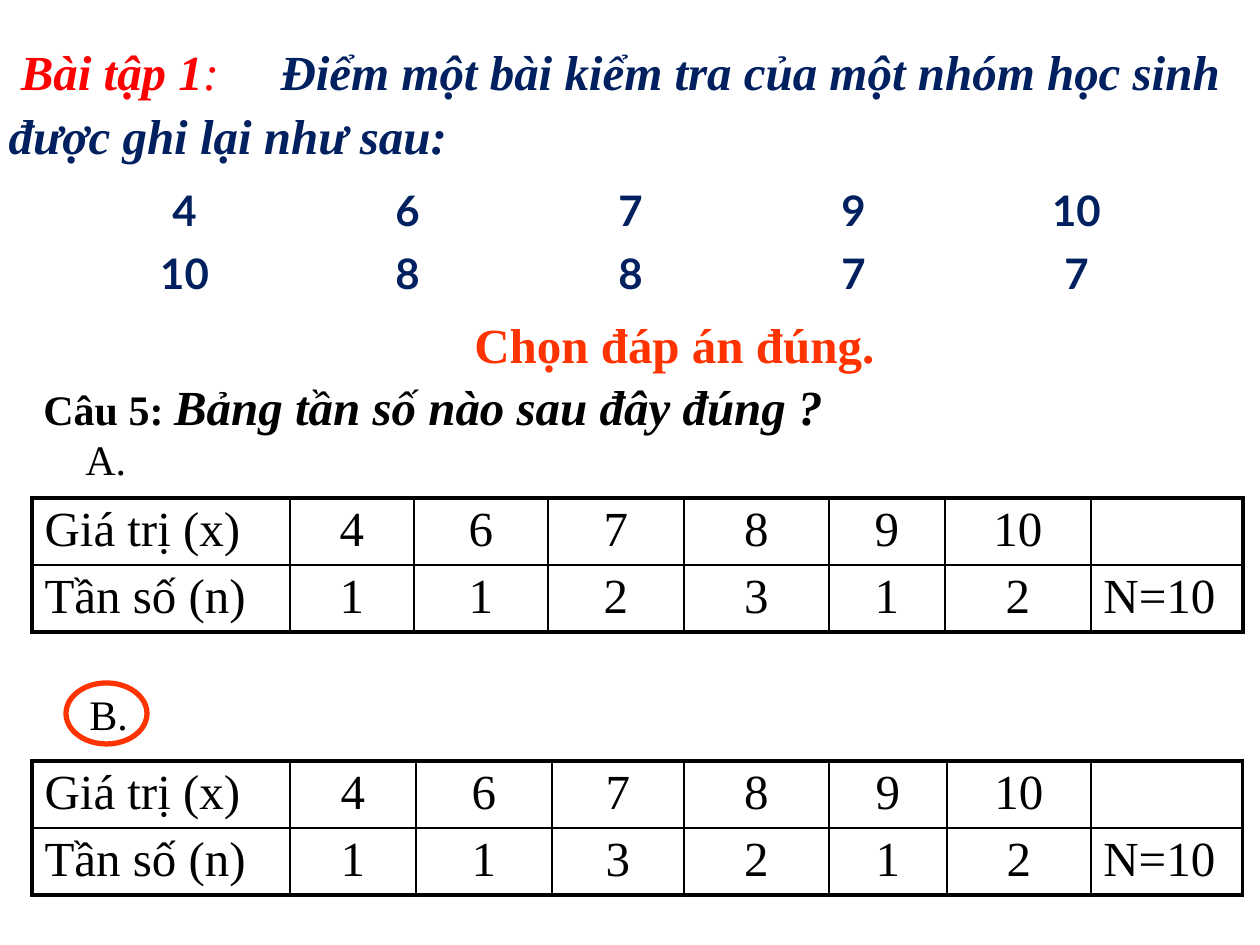
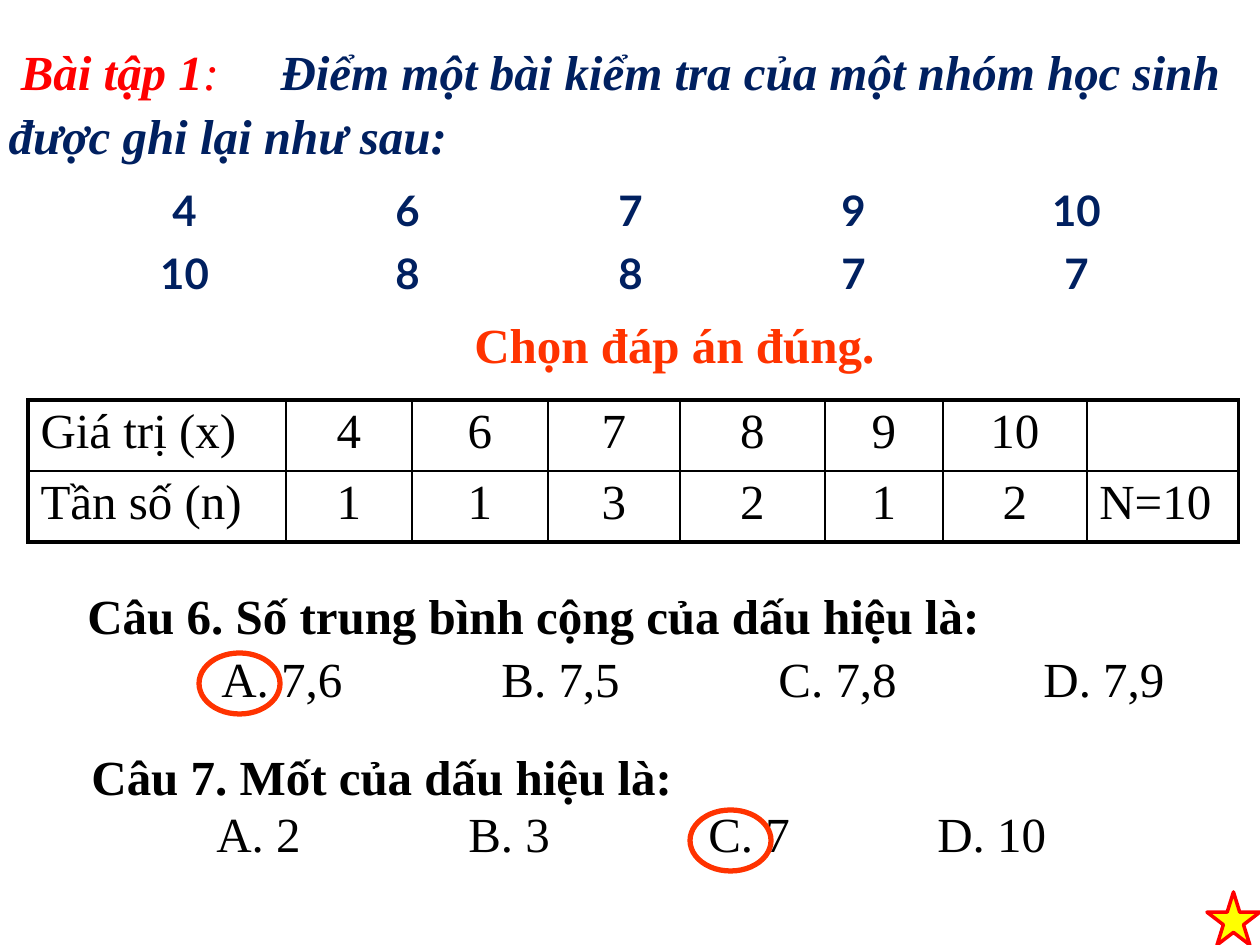
import dataclasses

import lxml.etree
import pptx
import pptx.dml.color
import pptx.enum.shapes
import pptx.enum.text
import pptx.oxml.ns
import pptx.util

EMU_PER_PX = 914400 / 126
INSET = 13
SHAPES = pptx.enum.shapes.MSO_SHAPE
ALIGN = pptx.enum.text.PP_ALIGN
NO_TABLE_STYLE = "{2D5ABB26-0587-4C30-8999-92F81FD0307C}"


@dataclasses.dataclass(frozen=True)
class Theme:
    """Colours, fonts, type sizes and line widths of the lesson."""

    ink: str = "000000"
    navy: str = "002060"
    red: str = "FF0000"
    orange: str = "FF3300"
    yellow: str = "FFFF00"
    serif: str = "Times New Roman"
    digits: str = "Lato"
    large: int = 28
    small: int = 24
    thin: float = 1
    thick: float = 2.25
    ring: float = 3
    star: float = 2


THEME = Theme()
TIGHT = {"line_spacing": 0.9, "space_before": pptx.util.Pt(6.5)}
SCORES = [["4", "6", "7", "9", "10"], ["10", "8", "8", "7", "7"]]
VALUES = ["Giá trị (x)", "4", "6", "7", "8", "9", "10", ""]
COUNTS_A = ["Tần số (n)", "1", "1", "2", "3", "1", "2", "N=10"]
COUNTS_B = ["Tần số (n)", "1", "1", "3", "2", "1", "2", "N=10"]
WIDTHS_A = [258, 124, 134, 136, 145, 116, 146, 152]
WIDTHS_B = [258, 126, 136, 132, 145, 118, 144, 152]


def px(length):
    """Turn px into EMU."""
    return pptx.util.Emu(round(length * EMU_PER_PX))


def box(*lengths):
    """Turn left, top, width and height from px into EMU."""
    return [px(length) for length in lengths]


def rgb(colour):
    """Return the colour object of a hex string."""
    return pptx.dml.color.RGBColor.from_string(colour)


def assign(target, values):
    """Set each attribute named in a dict."""
    for key, value in values.items():
        setattr(target, key, value)


def add_run(paragraph, text, colour=THEME.ink, size=THEME.large,
            name=THEME.serif, bold=False, italic=False):
    """Append one formatted run."""
    run = paragraph.add_run()
    run.text = text
    assign(run.font, {"name": name, "size": pptx.util.Pt(size),
                      "bold": bold, "italic": italic})
    run.font.color.rgb = rgb(colour)


def add_tab_stop(paragraph, position):
    """Place a left tab stop, given in px."""
    qn = pptx.oxml.ns.qn
    tabs = lxml.etree.SubElement(paragraph._p.get_or_add_pPr(), qn("a:tabLst"))
    lxml.etree.SubElement(tabs, qn("a:tab"), pos=str(px(position)), algn="l")


def fill_text(frame, lines, spacing):
    """Write lines, each a list of runs, into a text frame."""
    assign(frame, {"word_wrap": True,
                   "auto_size": pptx.enum.text.MSO_AUTO_SIZE.NONE,
                   "vertical_anchor": pptx.enum.text.MSO_ANCHOR.TOP})
    for number, runs in enumerate(lines):
        paragraph = frame.add_paragraph() if number else frame.paragraphs[0]
        assign(paragraph, {"alignment": ALIGN.LEFT, **spacing})
        for text, style in runs:
            add_run(paragraph, text, **style)


def add_text(slide, place, runs, spacing=None):
    """Add a text box holding one line."""
    frame = slide.shapes.add_textbox(*box(*place)).text_frame
    fill_text(frame, [runs], spacing or {})


def add_question(slide, left, top, question, pitch, options, spacing=None):
    """Add a bold question above a row of options keyed by their text edge."""
    add_text(slide, (left - INSET, top, 1100, 63),
             [(question, {"bold": True})], spacing)
    for edge, option in options.items():
        add_text(slide, (edge - INSET, top + pitch, 180, 63),
                 [(option, {})], spacing)


def add_outlined(slide, kind, place, line, width, fill=None):
    """Add a preset shape with an outline and an optional fill."""
    shape = slide.shapes.add_shape(kind, *box(*place))
    shape.shadow.inherit = False
    shape.line.color.rgb = rgb(line)
    shape.line.width = pptx.util.Pt(width)
    if fill:
        shape.fill.solid()
        shape.fill.fore_color.rgb = rgb(fill)
    else:
        shape.fill.background()


def add_ring(slide, left, top):
    """Circle the right answer."""
    add_outlined(slide, SHAPES.OVAL, (left, top, 81, 61), THEME.orange, THEME.ring)


def set_border(cell, side, width):
    """Draw one side of a cell."""
    qn = pptx.oxml.ns.qn
    line = lxml.etree.Element(qn("a:ln" + side), w=str(pptx.util.Pt(width)))
    fill = lxml.etree.SubElement(line, qn("a:solidFill"))
    lxml.etree.SubElement(fill, qn("a:srgbClr"), val=THEME.ink)
    cell._tc.get_or_add_tcPr().insert("LRTB".index(side), line)


def add_grid(slide, left, top, widths, row_height, rows, style):
    """Add a plain table and return it."""
    table = slide.shapes.add_table(
        len(rows), len(widths),
        *box(left, top, sum(widths), row_height * len(rows))).table
    table._tbl.tblPr.find(pptx.oxml.ns.qn("a:tableStyleId")).text = NO_TABLE_STYLE
    assign(table, {"first_row": False, "horz_banding": False})
    for column, width in zip(table.columns, widths):
        column.width = px(width)
    for row, texts in zip(table.rows, rows):
        row.height = px(row_height)
        for cell, text in zip(row.cells, texts):
            assign(cell, {"margin_top": px(5), "margin_bottom": px(5)})
            cell.fill.background()
            paragraph = cell.text_frame.paragraphs[0]
            paragraph.alignment = ALIGN.CENTER
            if text:
                add_run(paragraph, text, **style)
    return table


def add_frequencies(slide, left, top, widths, row_height, counts):
    """Add a ruled frequency table with a thick outer frame."""
    table = add_grid(slide, left, top, widths, row_height, [VALUES, counts], {})
    last = len(widths) - 1
    for r, row in enumerate(table.rows):
        for c, cell in enumerate(row.cells):
            outer = {"L": c == 0, "R": c == last, "T": r == 0, "B": r == 1}
            for side, is_outer in outer.items():
                set_border(cell, side, THEME.thick if is_outer else THEME.thin)
            if c in (0, last):
                cell.text_frame.paragraphs[0].alignment = ALIGN.LEFT


def add_exercise_slide(deck):
    """Add a slide with the heading, the scores and the instruction."""
    slide = deck.slides.add_slide(deck.slide_layouts[5])
    heading = slide.shapes.title
    assign(heading, dict(zip(("left", "top", "width", "height"),
                             box(-4, 42, 1264, 116))))
    slanted = {"italic": True, "colour": THEME.red}
    navy = {"italic": True, "bold": True, "colour": THEME.navy}
    fill_text(heading.text_frame, [
        [(" Bài tập 1", {**slanted, "bold": True}), (":\t", slanted),
         ("Điểm một bài kiểm tra của một nhóm học sinh", navy)],
        [("được ghi lại như sau:", navy)],
    ], TIGHT)
    add_tab_stop(heading.text_frame.paragraphs[0], 272)
    add_grid(slide, 73, 180, [223] * 5, 63, SCORES,
             {"name": THEME.digits, "size": THEME.small,
              "colour": THEME.navy, "bold": True})
    add_text(slide, (462, 315, 430, 63),
             [("Chọn đáp án đúng.", {"bold": True, "colour": THEME.orange})], TIGHT)
    return slide


def build_frequency_question(deck):
    """Build question 5 with its two candidate tables."""
    slide = add_exercise_slide(deck)
    small = {"size": THEME.small}
    add_ring(slide, 66, 683)
    add_frequencies(slide, 32, 498, WIDTHS_A, 67, COUNTS_A)
    add_frequencies(slide, 32, 761, WIDTHS_B, 67, COUNTS_B)
    for letter, left, top in (("A.", 73, 427), ("B.", 77, 682)):
        add_text(slide, (left, top, 141, 63), [(letter, small)])
    add_text(slide, (31, 370, 1207, 72), [
        ("Câu 5: ", {**small, "bold": True}),
        ("Bảng tần số nào sau đây đúng ?", {"bold": True, "italic": True}),
    ])


def build_mean_and_mode_questions(deck):
    """Build questions 6 and 7 below the right table."""
    slide = add_exercise_slide(deck)
    add_question(slide, 88, 586, "Câu 6. Số trung bình cộng của dấu hiệu là:", 63,
                 {222: "A. 7,6", 502: "B. 7,5", 779: "C. 7,8", 1044: "D. 7,9"},
                 TIGHT)
    add_question(slide, 92, 740, "Câu 7. Mốt của dấu hiệu là:", 57,
                 {217: "A. 2", 469: "B. 3", 709: "C. 7", 938: "D. 10"})
    add_ring(slide, 199, 653)
    add_ring(slide, 690, 810)
    add_frequencies(slide, 28, 400, WIDTHS_B, 71, COUNTS_B)
    add_outlined(slide, SHAPES.STAR_5_POINT, (1207, 892, 53, 53),
                 THEME.red, THEME.star, THEME.yellow)


def main():
    """Build and save the lesson."""
    deck = pptx.Presentation()
    assign(deck, {"slide_width": px(1260), "slide_height": px(945)})
    build_frequency_question(deck)
    build_mean_and_mode_questions(deck)
    deck.save("out.pptx")


if __name__ == "__main__":
    main()
